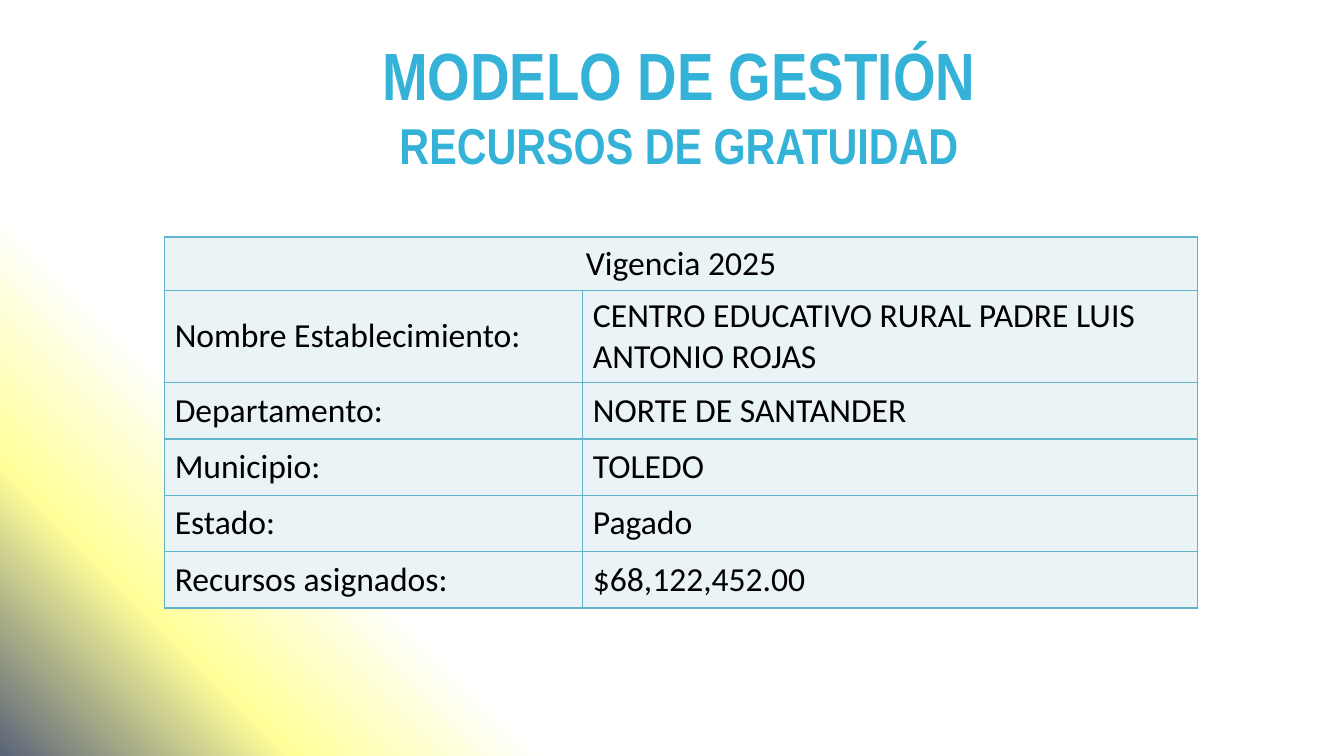
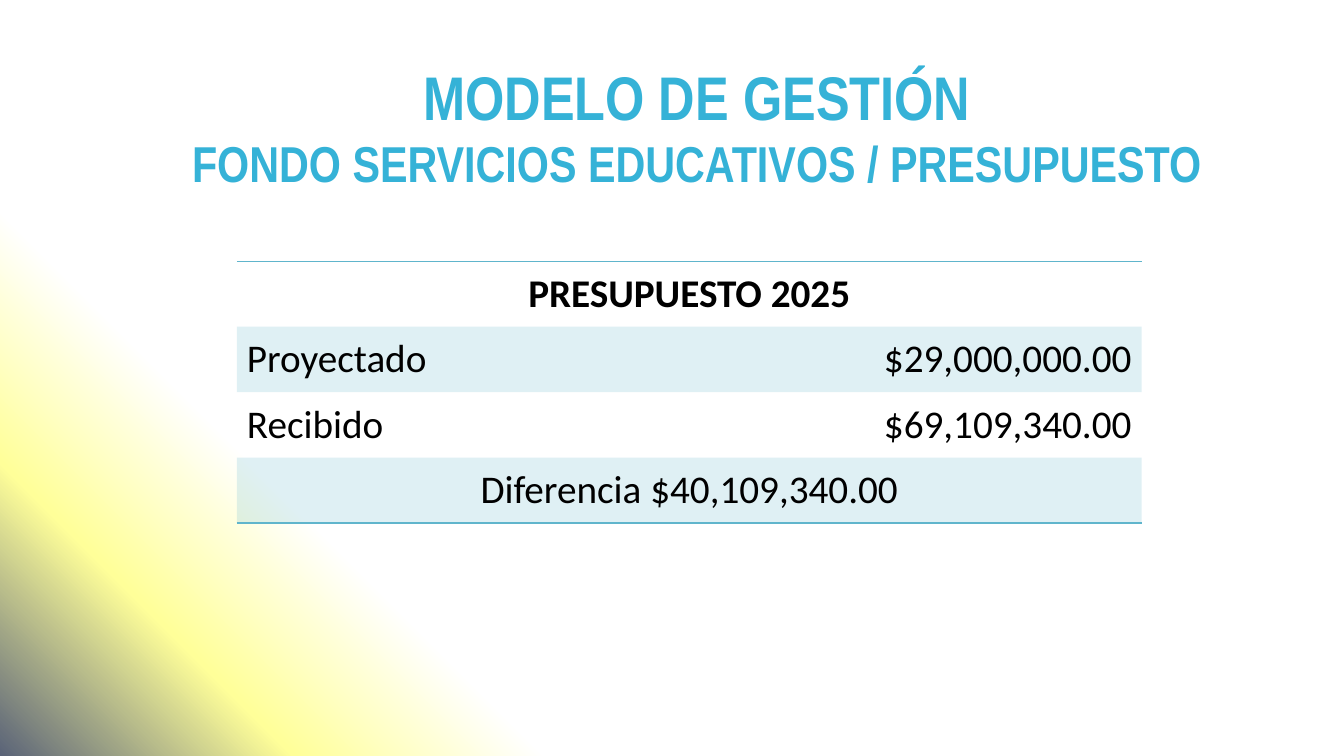
from copy import deepcopy

from lxml.etree import SubElement
from pptx import Presentation
from pptx.dml.color import RGBColor as RGB
from pptx.enum.text import MSO_ANCHOR as Anchor, MSO_AUTO_SIZE as Fit, PP_ALIGN as Align
from pptx.oxml.ns import qn
from pptx.util import Cm, Pt

COLORS = {
    "title": "35B2D7", "text": "000000", "line": "60B5CC", "pale": "EAF3F6",
    "white": "FFFFFF", "yellow": "FFFF99", "slate": "5A6378",
}
STOPS = [("white", 0.74), ("yellow", 0.86), ("slate", 1)]
NO_STYLE = "{2D5ABB26-0587-4C30-8999-92F81FD0307C}"
TITLE_FONT, BODY_FONT = "Arial Narrow", "Calibri"

# Boxes, columns and rows are in centimetres; a row of one text spans the table.
# Each row style is (fill, opacity in percent, border sides).
GRID = ("pale", 100, "LRTB")
TINT = ("line", 20, "")
SLIDES = [
    {
        "title": [("MODELO DE GESTIÓN", 47.7), ("RECURSOS DE GRATUIDAD", 36)],
        "box": (1.8, 1.22, 30.63, 2.82),
        "at": (4.15, 5.97), "cols": [10.54, 15.49],
        "heights": [1.35, 2.16] + [1.42] * 4,
        "size": 24, "bold_head": False, "right": False,
        "rows": [
            ["Vigencia 2025"],
            ["Nombre Establecimiento:", "CENTRO EDUCATIVO RURAL PADRE LUIS ANTONIO ROJAS"],
            ["Departamento:", "NORTE DE SANTANDER"],
            ["Municipio:", "TOLEDO"],
            ["Estado:", "Pagado"],
            ["Recursos asignados:", "$68,122,452.00"],
        ],
        "styles": [GRID] * 6,
    },
    {
        "title": [("MODELO DE GESTIÓN", 44), ("FONDO SERVICIOS EDUCATIVOS / PRESUPUESTO", 36)],
        "box": (3.18, 1.47, 28.78, 3.4),
        "at": (5.97, 6.58), "cols": [11.4] * 2,
        "heights": [1.65] * 4,
        "size": 28, "bold_head": True, "right": True,
        "rows": [
            ["PRESUPUESTO 2025"],
            ["Proyectado", "$29,000,000.00"],
            ["Recibido", "$69,109,340.00"],
            ["Diferencia $40,109,340.00"],
        ],
        "styles": [(None, 0, "TB"), TINT, (None, 0, ""), ("line", 20, "B")],
    },
]


def color(name):
    return RGB.from_string(COLORS[name])


def set_back(master):
    fill = master.background.fill
    fill.gradient()
    fill.gradient_angle = 225  # counter-clockwise: towards the lower left
    stops = master.element.find(".//" + qn("a:gsLst"))
    stops.append(deepcopy(stops[0]))
    for stop, (name, place) in zip(fill.gradient_stops, STOPS):
        stop.color.rgb = color(name)
        stop.position = place


def add_title(slide, lines, box):
    shape = slide.shapes.title
    shape.left, shape.top, shape.width, shape.height = map(Cm, box)
    frame = shape.text_frame
    frame.auto_size = Fit.NONE
    frame.vertical_anchor = Anchor.MIDDLE
    para = frame.paragraphs[0]
    para.text = "\v".join(text for text, size in lines)
    para.alignment = Align.CENTER
    font = para.font
    font.name, font.bold = TITLE_FONT, True
    font.color.rgb = color("title")
    for run, (text, size) in zip(para.runs, lines):
        run.font.size = Pt(size)


def style_cell(cell, fill, alpha, sides):
    props = cell._tc.get_or_add_tcPr()
    for side in "LRTB":
        line = SubElement(props, qn("a:ln" + side), w=str(Pt(1)))
        if side in sides:
            paint = SubElement(line, qn("a:solidFill"))
            SubElement(paint, qn("a:srgbClr"), val=COLORS["line"])
        else:
            SubElement(line, qn("a:noFill"))
    if not fill:
        cell.fill.background()
        return
    cell.fill.solid()
    cell.fill.fore_color.rgb = color(fill)
    if alpha < 100:
        tone = props.find(qn("a:solidFill")).find(qn("a:srgbClr"))
        SubElement(tone, qn("a:alpha"), val=str(alpha * 1000))


def write_cell(cell, text, align, size, bold):
    cell.vertical_anchor = Anchor.MIDDLE
    para = cell.text_frame.paragraphs[0]
    para.text, para.alignment = text, align
    font = para.font
    font.name, font.size, font.bold = BODY_FONT, Pt(size), bold
    font.color.rgb = color("text")


def add_grid(slide, data):
    rows, cols, heights = data["rows"], data["cols"], data["heights"]
    frame = slide.shapes.add_table(
        len(rows), len(cols), *map(Cm, data["at"]), Cm(sum(cols)), Cm(sum(heights)))
    table = frame.table
    table.first_row = table.horz_banding = False
    table._tbl.tblPr.find(qn("a:tableStyleId")).text = NO_STYLE
    for col, width in zip(table.columns, cols):
        col.width = Cm(width)
    for r, (texts, style) in enumerate(zip(rows, data["styles"])):
        table.rows[r].height = Cm(heights[r])
        cells = list(table.rows[r].cells)
        for cell in cells:
            style_cell(cell, *style)
        wide = len(texts) == 1
        if wide:
            cells[0].merge(cells[-1])
        for c, text in enumerate(texts):
            align = Align.CENTER if wide else Align.RIGHT if c and data["right"] else Align.LEFT
            write_cell(cells[c], text, align, data["size"], r == 0 and data["bold_head"])


def main():
    prs = Presentation()
    prs.slide_width, prs.slide_height = Cm(33.87), Cm(19.05)
    set_back(prs.slide_master)
    layout = prs.slide_layouts.get_by_name("Title Only")
    for data in SLIDES:
        slide = prs.slides.add_slide(layout)
        add_title(slide, data["title"], data["box"])
        add_grid(slide, data)
    prs.save("out.pptx")


if __name__ == "__main__":
    main()
